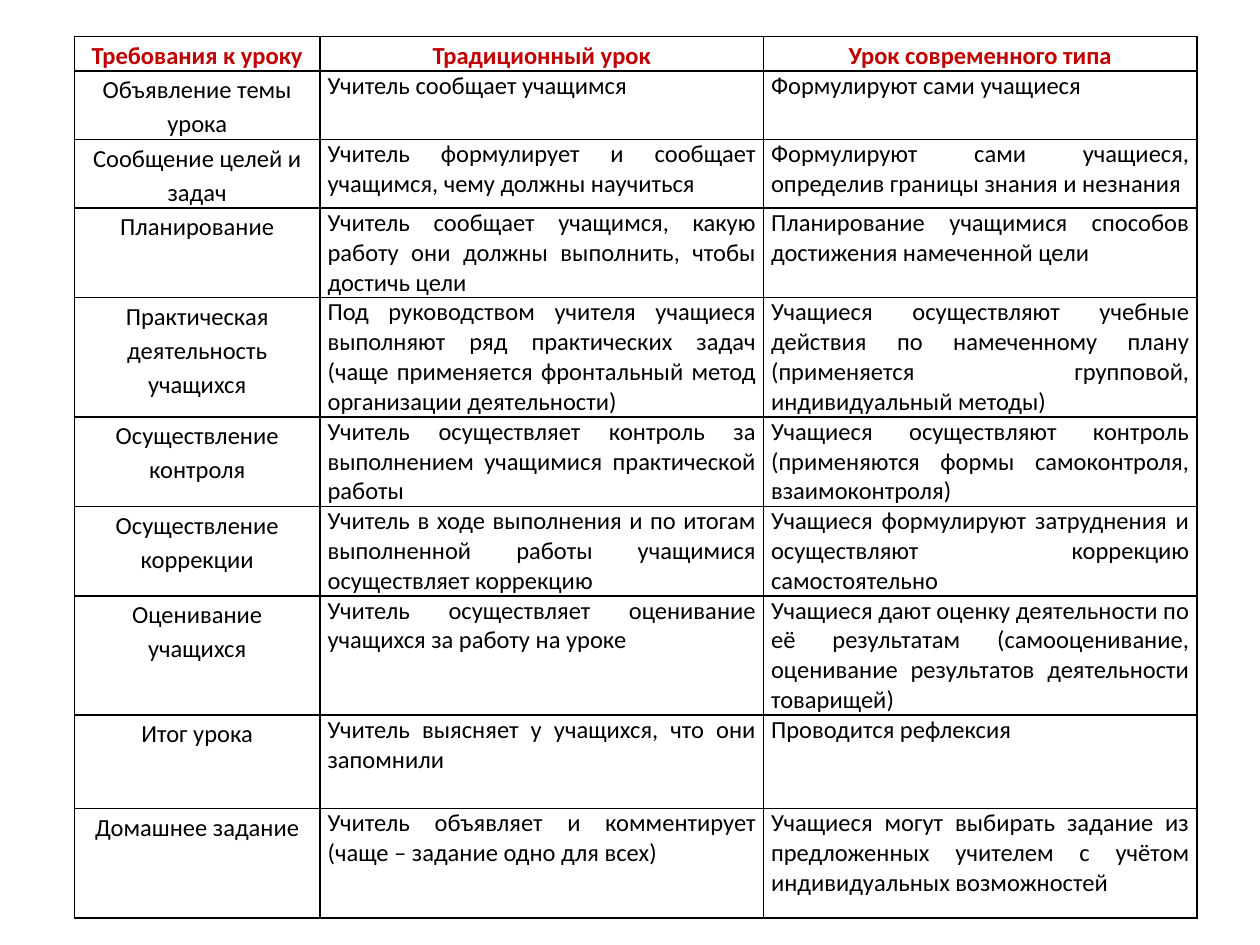
from lxml.etree import SubElement
from pptx import Presentation
from pptx.dml.color import RGBColor
from pptx.enum.text import PP_ALIGN as Align
from pptx.oxml.ns import qn
from pptx.util import Inches, Pt

COLUMN_WIDTHS = [1.95, 3.52, 3.44]
ROW_HEIGHTS = [0.23, 0.47, 0.47, 0.7, 0.94, 0.7, 0.7, 0.94, 0.74, 0.87]
LESSON_ROWS = [
    ("Требования к уроку", "Традиционный урок", "Урок современного типа"),
    ("Объявление темы урока",
     "Учитель сообщает учащимся",
     "Формулируют сами учащиеся "),
    ("Сообщение целей и задач",
     "Учитель формулирует и сообщает учащимся, чему должны научиться",
     "Формулируют сами учащиеся, определив границы знания и незнания"),
    ("Планирование",
     "Учитель сообщает учащимся, какую работу они должны выполнить, чтобы достичь цели",
     "Планирование учащимися способов достижения намеченной цели"),
    ("Практическая деятельность учащихся",
     "Под руководством учителя учащиеся выполняют ряд практических задач "
     "(чаще применяется фронтальный метод организации деятельности)",
     "Учащиеся осуществляют учебные действия по намеченному плану "
     "(применяется групповой, индивидуальный методы)"),
    ("Осуществление контроля",
     "Учитель осуществляет контроль за выполнением учащимися практической работы",
     "Учащиеся осуществляют контроль (применяются формы самоконтроля, взаимоконтроля)"),
    ("Осуществление коррекции",
     "Учитель в ходе выполнения и по итогам выполненной работы учащимися осуществляет коррекцию",
     "Учащиеся формулируют затруднения и осуществляют коррекцию самостоятельно"),
    ("Оценивание учащихся",
     "Учитель осуществляет оценивание учащихся за работу на уроке",
     "Учащиеся дают оценку деятельности по её результатам "
     "(самооценивание, оценивание результатов деятельности товарищей)"),
    ("Итог урока",
     "Учитель выясняет у учащихся, что они запомнили",
     "Проводится рефлексия"),
    ("Домашнее задание",
     "Учитель объявляет и комментирует (чаще – задание одно для всех)",
     "Учащиеся могут выбирать задание из предложенных учителем "
     "с учётом индивидуальных возможностей"),
]


def color(value):
    return RGBColor.from_string(value)


class SlideBuilder:
    font = "Calibri"
    size = Pt(14)
    ink = "000000"
    accent = "C00000"

    def __init__(self, slide):
        self.slide = slide

    def table(self, left, top, widths, heights, rows):
        frame = self.slide.shapes.add_table(
            len(rows), len(widths), Inches(left), Inches(top),
            Inches(sum(widths)), Inches(sum(heights)))
        table = frame.table
        table.horz_banding = False
        for column, width in zip(table.columns, widths):
            column.width = Inches(width)
        for row, height in zip(table.rows, heights):
            row.height = Inches(height)
        for row_index, texts in enumerate(rows):
            for column_index, text in enumerate(texts):
                self.cell(table.cell(row_index, column_index), text,
                          header=row_index == 0, label=column_index == 0)

    def cell(self, cell, text, header, label):
        cell.margin_left = cell.margin_right = Inches(0.06)
        cell.margin_top = cell.margin_bottom = 0
        self.borders(cell)
        cell.fill.background()
        cell.text_frame.text = text
        para = cell.text_frame.paragraphs[0]
        centered = header or label
        para.alignment = Align.CENTER if centered else Align.JUSTIFY
        para.line_spacing = 1.15 if centered else 1.0
        para.space_after = Pt(10)
        font = para.runs[0].font
        font.name = self.font
        font.size = self.size
        font.bold = header
        font.color.rgb = color(self.accent if header else self.ink)

    def borders(self, cell):
        properties = cell._tc.get_or_add_tcPr()
        for side in ("a:lnL", "a:lnR", "a:lnT", "a:lnB"):
            line = SubElement(properties, qn(side), w=str(Pt(1)))
            fill = SubElement(line, qn("a:solidFill"))
            SubElement(fill, qn("a:srgbClr"), val=self.ink)


def main():
    deck = Presentation()
    deck.slide_width = Inches(10)
    deck.slide_height = Inches(7.5)
    page = deck.slides.add_slide(deck.slide_layouts[6])
    builder = SlideBuilder(page)
    builder.table(0.59, 0.29, COLUMN_WIDTHS, ROW_HEIGHTS, LESSON_ROWS)
    deck.save("out.pptx")


if __name__ == "__main__":
    main()
